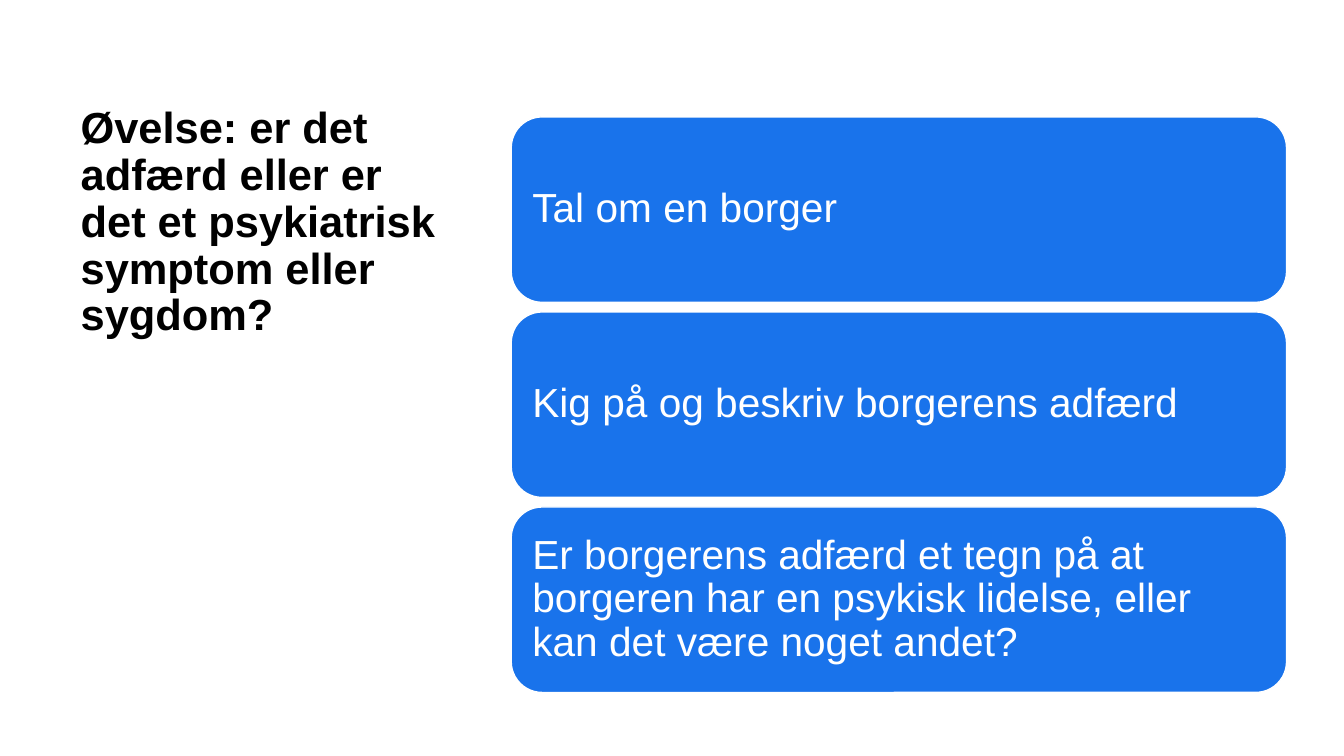
import pptx
import pptx.util
import pptx.dml.color
import pptx.enum.shapes
import pptx.enum.text

Inches = pptx.util.Inches
Pt = pptx.util.Pt
RGBColor = pptx.dml.color.RGBColor
Anchor = pptx.enum.text.MSO_ANCHOR

BLACK = RGBColor(0x00, 0x00, 0x00)
WHITE = RGBColor(0xFF, 0xFF, 0xFF)
BLUE = RGBColor(0x19, 0x73, 0xEB)

WIDE, HIGH = Inches(13.33), Inches(7.5)
LEFT, TOP = Inches(5.07), Inches(1.16)
CARD_W, CARD_H = Inches(7.69), Inches(1.84)
STEP = Inches(1.935)

TITLE = "Øvelse: er det adfærd eller er det et psykiatrisk symptom eller\nsygdom?"
TASKS = [
    "Tal om en borger",
    "Kig på og beskriv borgerens adfærd",
    "Er borgerens adfærd et tegn på at borgeren har en psykisk lidelse, "
    "eller kan det være noget andet?",
]


def write(shape, text, size, color, bold=False, anchor=Anchor.MIDDLE, pad=(0.12, 0.12)):
    frame = shape.text_frame
    frame.word_wrap = True
    frame.auto_size = pptx.enum.text.MSO_AUTO_SIZE.NONE
    frame.vertical_anchor = anchor
    frame.margin_left = frame.margin_right = Inches(pad[0])
    frame.margin_top = frame.margin_bottom = Inches(pad[1])
    line = frame.paragraphs[0]
    line.text = text
    line.alignment = pptx.enum.text.PP_ALIGN.LEFT
    line.line_spacing = 0.9
    for run in line.runs:
        run.font.name = "Arial"
        run.font.size = Pt(size)
        run.font.bold = bold
        run.font.color.rgb = color


def head(slide, text):
    title = slide.shapes.title
    title.left, title.top = Inches(0.7), Inches(1)
    title.width, title.height = Inches(3.73), Inches(3.67)
    write(title, text, 31, BLACK, bold=True, anchor=Anchor.TOP, pad=(0.1, 0.05))


def card(slide, row, text):
    box = slide.shapes.add_shape(
        pptx.enum.shapes.MSO_SHAPE.ROUNDED_RECTANGLE,
        LEFT, TOP + row * STEP, CARD_W, CARD_H)
    box.shadow.inherit = False
    box.fill.solid()
    box.fill.fore_color.rgb = BLUE
    box.line.color.rgb = WHITE
    box.line.width = Pt(1)
    write(box, text, 29, WHITE)


def main():
    deck = pptx.Presentation()
    deck.slide_width, deck.slide_height = WIDE, HIGH
    slide = deck.slides.add_slide(deck.slide_layouts[5])
    head(slide, TITLE)
    for row, text in enumerate(TASKS):
        card(slide, row, text)
    deck.save("out.pptx")


if __name__ == "__main__":
    main()
